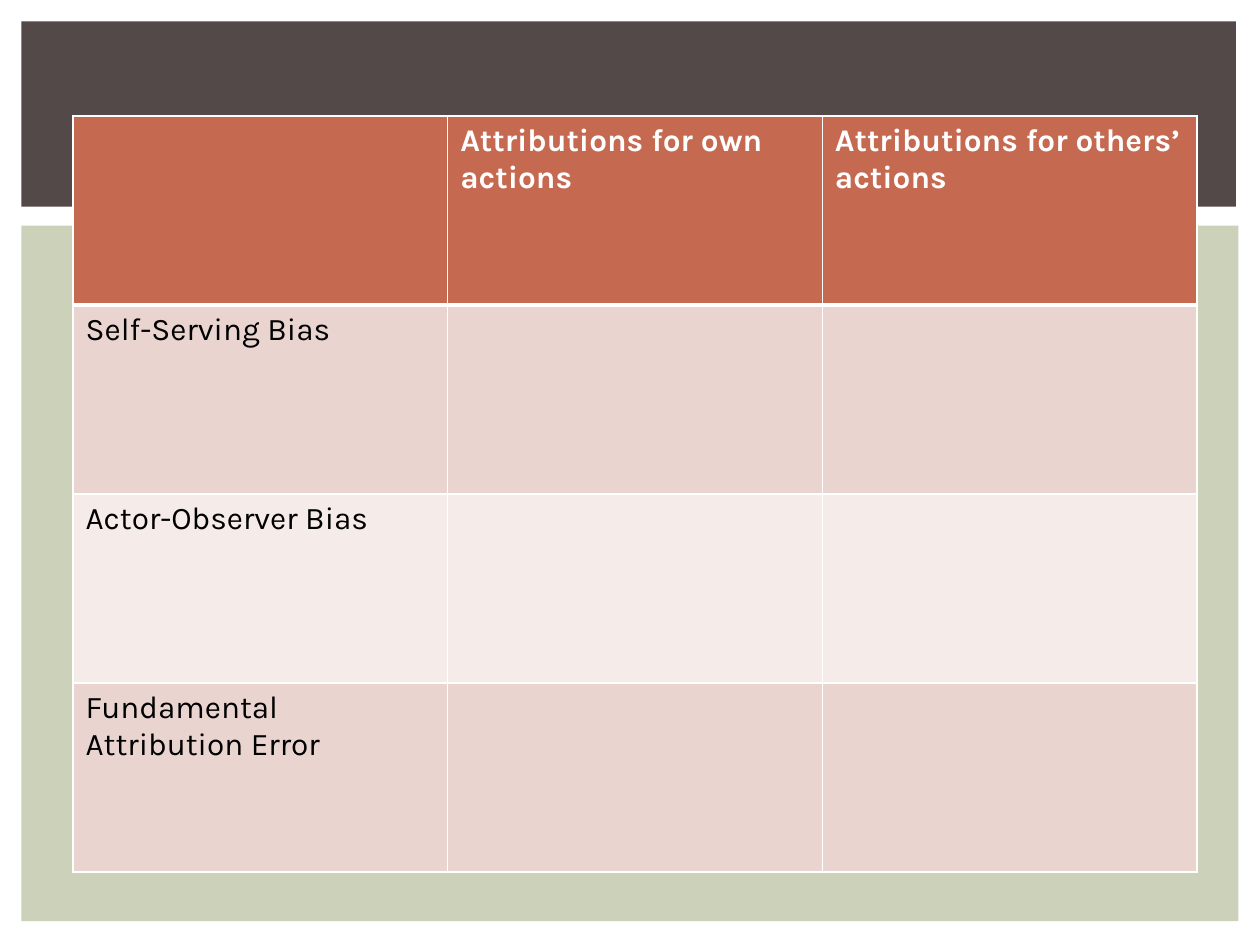
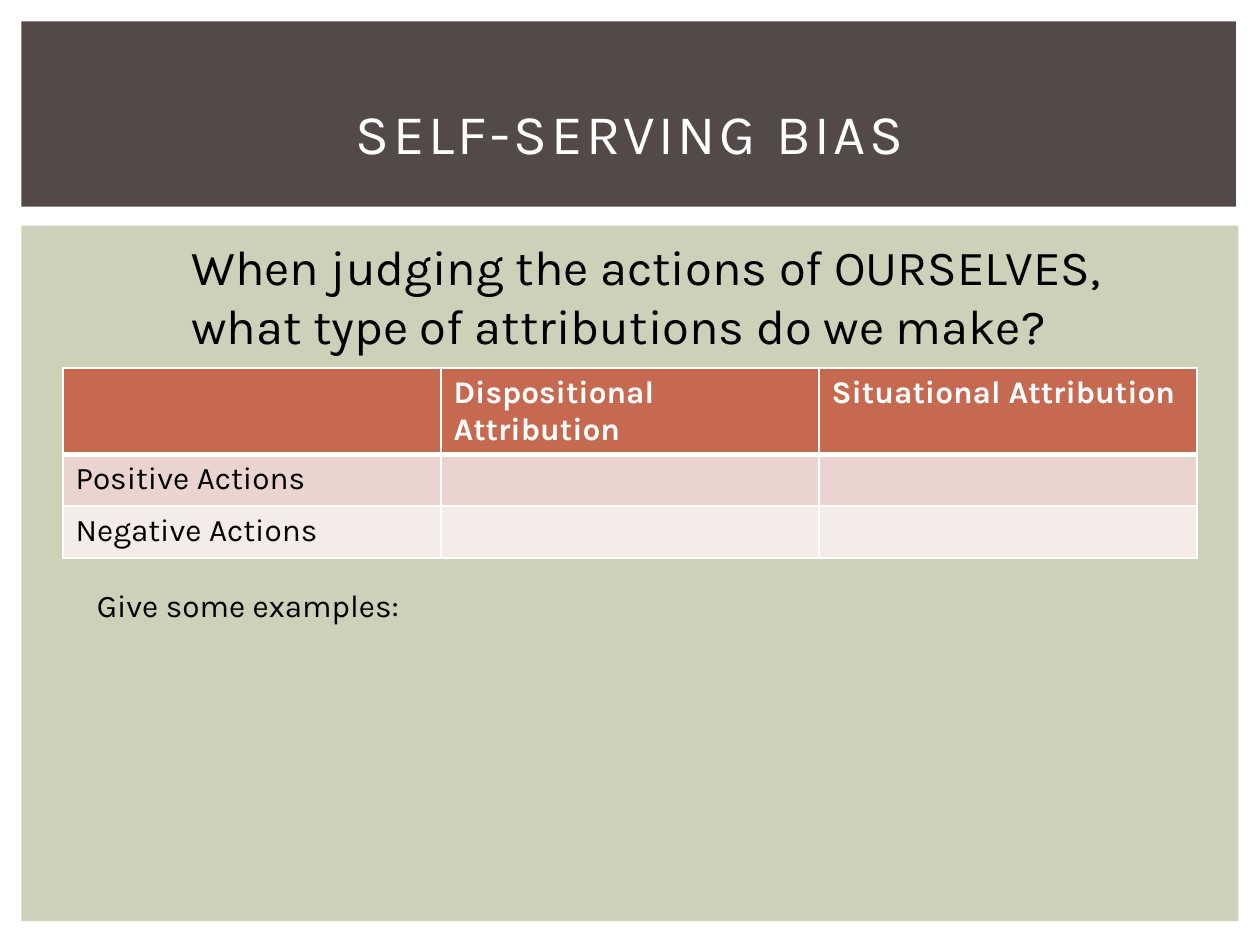
from lxml.etree import SubElement
from pptx import Presentation
from pptx.dml.color import RGBColor
from pptx.enum.shapes import MSO_SHAPE
from pptx.enum.text import MSO_ANCHOR, MSO_AUTO_SIZE, PP_ALIGN
from pptx.oxml.ns import qn
from pptx.util import Inches, Pt

FONT = "Karla"
WHITE, BLACK = "FFFFFF", "000000"
HEADER_FILL = "C66951"
ROW_FILLS = ["EAD4D0", "F5EBE9"]
BANDS = [
    ("CCD1B9", (0.17, 1.79, 9.66, 5.52)),
    ("534949", (0.17, 0.17, 9.64, 1.47)),
]
TITLE_BOX = (0.5, 0.42, 9, 1.25)
TITLE_ONLY, BLANK = 5, 6

SLIDES = [
    {
        "table": {
            "at": (0.58, 0.92),
            "width": 8.92,
            "row_heights": [1.5] * 4,
            "header": ["", "Attributions for own actions", "Attributions for others’ actions"],
            "labels": ["Self-Serving Bias", "Actor-Observer Bias", "Fundamental Attribution Error"],
        },
    },
    {
        "title": "SELF-SERVING BIAS",
        "table": {
            "at": (0.5, 2.92),
            "width": 9,
            "row_heights": [0.39, 0.41, 0.41],
            "header": ["", "Dispositional Attribution", "Situational Attribution"],
            "labels": ["Positive Actions", "Negative Actions"],
        },
        "notes": [
            ("When judging the actions of OURSELVES, what type of attributions do we make?",
             (1.42, 1.83, 7.75, 1.04), 28),
            ("Give some examples:", (0.67, 4.6, 3.17, 0.4), 18),
        ],
    },
]


def rgb(color):
    return RGBColor.from_string(color)


def inches(box):
    return [Inches(n) for n in box]


def put_text(tf, text, size=18, color=BLACK, bold=False, align=PP_ALIGN.LEFT, spacing=None):
    tf.word_wrap = True
    p = tf.paragraphs[0]
    p.alignment = align
    r = p.add_run()
    r.text = text
    r.font.name = FONT
    r.font.size = Pt(size)
    r.font.bold = bold
    r.font.color.rgb = rgb(color)
    if spacing:
        r.font._element.set("spc", str(spacing * 100))


def add_bands(s):
    for i, (color, box) in enumerate(BANDS):
        sp = s.shapes.add_shape(MSO_SHAPE.RECTANGLE, *inches(box))
        sp.shadow.inherit = False
        sp.fill.solid()
        sp.fill.fore_color.rgb = rgb(color)
        sp.line.fill.background()
        s.shapes.element.insert(2 + i, sp.element)


def add_title(s, text):
    title = s.shapes.title
    title.left, title.top, title.width, title.height = inches(TITLE_BOX)
    tf = title.text_frame
    tf.auto_size = MSO_AUTO_SIZE.NONE
    tf.vertical_anchor = MSO_ANCHOR.MIDDLE
    put_text(tf, text, size=32, color=WHITE, align=PP_ALIGN.CENTER, spacing=2)


def set_borders(cell, **widths):
    tc_pr = cell._tc.get_or_add_tcPr()
    for side in "LRTB":
        ln = SubElement(tc_pr, qn(f"a:ln{side}"), w=str(Pt(widths.get(side, 1))))
        fill = SubElement(ln, qn("a:solidFill"))
        SubElement(fill, qn("a:srgbClr"), val=WHITE)


def add_table(s, at, width, row_heights, header, labels):
    rows = [header] + [[label] + [""] * (len(header) - 1) for label in labels]
    box = (*at, width, sum(row_heights))
    table = s.shapes.add_table(len(rows), len(header), *inches(box)).table
    for column in table.columns:
        column.width = Inches(width / len(header))
    for i, (texts, height) in enumerate(zip(rows, row_heights)):
        table.rows[i].height = Inches(height)
        is_header = i == 0
        for j, text in enumerate(texts):
            cell = table.cell(i, j)
            set_borders(cell, B=3 if is_header else 1, T=3 if i == 1 else 1)
            cell.fill.solid()
            cell.fill.fore_color.rgb = rgb(HEADER_FILL if is_header else ROW_FILLS[(i - 1) % 2])
            if text:
                put_text(cell.text_frame, text, color=WHITE if is_header else BLACK, bold=is_header)


def add_note(s, text, box, size):
    tf = s.shapes.add_textbox(*inches(box)).text_frame
    tf.auto_size = MSO_AUTO_SIZE.SHAPE_TO_FIT_TEXT
    put_text(tf, text, size=size)


def main():
    prs = Presentation()
    prs.slide_width, prs.slide_height = Inches(10), Inches(7.5)
    for content in SLIDES:
        layout = TITLE_ONLY if "title" in content else BLANK
        s = prs.slides.add_slide(prs.slide_layouts[layout])
        add_bands(s)
        add_table(s, **content["table"])
        if "title" in content:
            add_title(s, content["title"])
        for note in content.get("notes", []):
            add_note(s, *note)
    prs.save("out.pptx")


if __name__ == "__main__":
    main()
